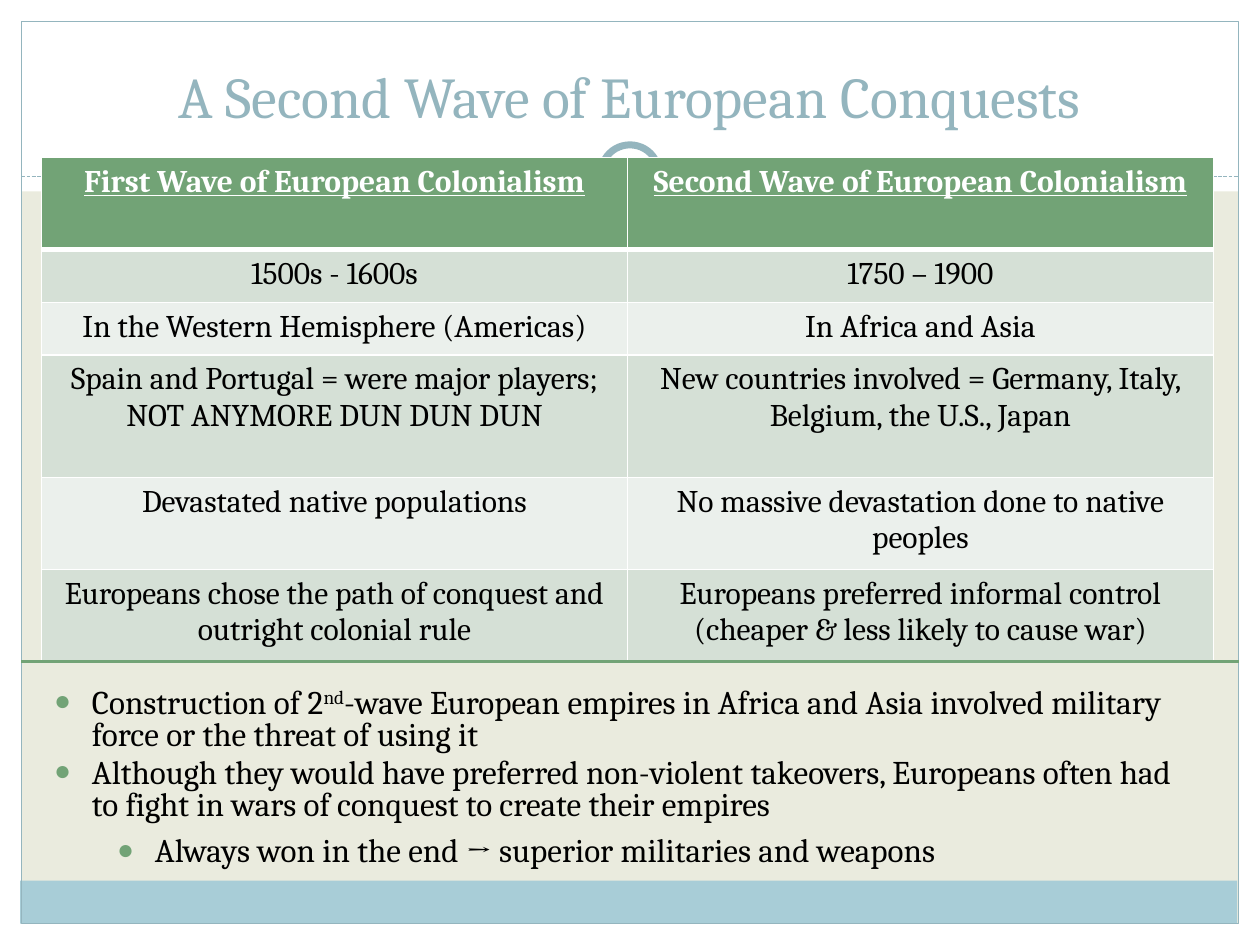
from dataclasses import dataclass
from typing import Optional

from lxml.etree import SubElement
from pptx import Presentation
from pptx.dml.color import RGBColor
from pptx.enum.dml import MSO_LINE
from pptx.enum.shapes import MSO_CONNECTOR, MSO_SHAPE
from pptx.enum.text import MSO_ANCHOR, MSO_AUTO_SIZE, PP_ALIGN
from pptx.oxml.ns import qn
from pptx.util import Inches, Pt


@dataclass(frozen=True)
class Theme:
    font: str = "Cambria"
    background: str = "EAEBDE"
    white: str = "FFFFFF"
    black: str = "000000"
    blue: str = "94B5BE"
    light_blue: str = "A8CDD7"
    green: str = "72A376"
    bands: tuple = ("D5E0D6", "EBF0EC")
    title_size: float = 33
    table_size: float = 18
    body_size: float = 18.9


@dataclass(frozen=True)
class Panel:
    left: float
    top: float
    width: float
    height: float
    fill: Optional[str] = None
    line: Optional[str] = None
    line_width: float = 0.75
    preset: MSO_SHAPE = MSO_SHAPE.RECTANGLE


@dataclass(frozen=True)
class Bullet:
    texts: tuple  # every second text is superscript
    level: int = 0
    indent: float = 0.3
    line_spacing: float = 0.8


THEME = Theme()
EDGE = 0.17
RIGHT = 10 - EDGE

FRAME = [
    Panel(0, 7.33, 10, EDGE, THEME.white),
    Panel(0, 0, 10, 1.52, THEME.white),
    Panel(0, 0, EDGE, 7.5, THEME.white),
    Panel(RIGHT, 0, EDGE, 7.5, THEME.white),
    Panel(0.16, 6.99, 9.66, 0.34, THEME.light_blue),
    Panel(EDGE, EDGE, 9.66, 7.16, line=THEME.blue),
]
RING = [
    Panel(4.67, 1.05, 0.67, 0.67, THEME.white, preset=MSO_SHAPE.OVAL),
    Panel(4.77, 1.15, 0.46, 0.46, THEME.white, THEME.blue, 4, MSO_SHAPE.OVAL),
]
ROW_HEIGHTS = [0.73, 0.42, 0.42, 0.97, 0.73, 0.73]
ROWS = [
    ("First Wave of European Colonialism", "Second Wave of European Colonialism"),
    ("1500s - 1600s", "1750 – 1900"),
    ("In the Western Hemisphere (Americas)", "In Africa and Asia"),
    ("Spain and Portugal = were major players; NOT ANYMORE DUN DUN DUN",
     "New countries involved = Germany, Italy, Belgium, the U.S., Japan"),
    ("Devastated native populations", "No massive devastation done to native peoples"),
    ("Europeans chose the path of conquest and outright colonial rule",
     "Europeans preferred informal control (cheaper & less likely to cause war)"),
]
BULLETS = [
    Bullet(("Construction of 2", "nd", "-wave European empires in Africa and Asia "
            "involved military force or the threat of using it")),
    Bullet(("Although they would have preferred non-violent takeovers, Europeans often "
            "had to fight in wars of conquest to create their empires",)),
    Bullet(("Always won in the end → superior militaries and weapons",), 1, 0.8, 1.0),
]


def color(value: str) -> RGBColor:
    return RGBColor.from_string(value)


def format_run(run, size: float, value: str, bold: bool = False) -> None:
    run.font.name = THEME.font
    run.font.size = Pt(size)
    run.font.color.rgb = color(value)
    run.font.bold = bold
    run.font.underline = bold


def place(shape, left: float, top: float, width: float, height: float) -> None:
    shape.left, shape.top = Inches(left), Inches(top)
    shape.width, shape.height = Inches(width), Inches(height)


def add_panel(slide, panel: Panel) -> None:
    shape = slide.shapes.add_shape(
        panel.preset, Inches(panel.left), Inches(panel.top),
        Inches(panel.width), Inches(panel.height))
    shape.shadow.inherit = False
    if panel.fill:
        shape.fill.solid()
        shape.fill.fore_color.rgb = color(panel.fill)
    else:
        shape.fill.background()
    if panel.line:
        shape.line.color.rgb = color(panel.line)
        shape.line.width = Pt(panel.line_width)
    else:
        shape.line.fill.background()


def add_rule(slide, top: float, value: str, width: float, dash=None) -> None:
    rule = slide.shapes.add_connector(
        MSO_CONNECTOR.STRAIGHT, Inches(EDGE), Inches(top), Inches(RIGHT), Inches(top))
    rule.line.color.rgb = color(value)
    rule.line.width = Pt(width)
    if dash:
        rule.line.dash_style = dash
    SubElement(rule._element.spPr, qn("a:effectLst"))


def set_borders(cell, bottom_width: float, top_width: float) -> None:
    properties = cell._tc.get_or_add_tcPr()
    widths = {"a:lnL": 1, "a:lnR": 1, "a:lnT": top_width, "a:lnB": bottom_width}
    for tag, width in widths.items():
        border = SubElement(properties, qn(tag), w=str(Pt(width)))
        fill = SubElement(border, qn("a:solidFill"))
        SubElement(fill, qn("a:srgbClr"), val=THEME.white)


def add_comparison(slide) -> None:
    table = slide.shapes.add_table(
        len(ROWS), 2, Inches(0.33), Inches(1.25), Inches(9.3),
        Inches(sum(ROW_HEIGHTS))).table
    for row_index, (texts, height) in enumerate(zip(ROWS, ROW_HEIGHTS)):
        table.rows[row_index].height = Inches(height)
        header = row_index == 0
        for column_index, text in enumerate(texts):
            cell = table.cell(row_index, column_index)
            set_borders(cell, 3 if header else 1, 3 if row_index == 1 else 1)
            cell.fill.solid()
            cell.fill.fore_color.rgb = color(
                THEME.green if header else THEME.bands[(row_index - 1) % 2])
            cell.text_frame.text = text
            paragraph = cell.text_frame.paragraphs[0]
            paragraph.alignment = PP_ALIGN.CENTER
            format_run(paragraph.runs[0], THEME.table_size,
                       THEME.white if header else THEME.black, header)


def write_bullet(paragraph, bullet: Bullet) -> None:
    paragraph.level = bullet.level
    paragraph.line_spacing = bullet.line_spacing
    paragraph.space_before = Pt(3.8)
    for index, text in enumerate(bullet.texts):
        run = paragraph.add_run()
        run.text = text
        format_run(run, THEME.body_size, THEME.black)
        if index % 2:
            run.font._element.set("baseline", "30000")
    properties = paragraph._p.get_or_add_pPr()
    properties.set("marL", str(Inches(bullet.indent)))
    properties.set("indent", str(Inches(-0.3)))
    bullet_color = SubElement(properties, qn("a:buClr"))
    SubElement(bullet_color, qn("a:srgbClr"), val=THEME.green)
    SubElement(properties, qn("a:buSzPct"), val="85000")
    SubElement(properties, qn("a:buChar"), char="●")


def main() -> None:
    presentation = Presentation()
    presentation.slide_width, presentation.slide_height = Inches(10), Inches(7.5)
    slide = presentation.slides.add_slide(presentation.slide_layouts[1])
    slide.background.fill.solid()
    slide.background.fill.fore_color.rgb = color(THEME.background)
    title, body = slide.placeholders

    # Frame, dashed rule and ring
    for panel in FRAME:
        add_panel(slide, panel)
    add_rule(slide, 1.4, THEME.blue, 0.75, MSO_LINE.SQUARE_DOT)
    for panel in RING:
        add_panel(slide, panel)

    # Title, raised above the frame
    slide.shapes._spTree.append(title._element)
    place(title, 0.33, 0.25, 9.33, 0.83)
    title.text_frame.text = "A Second Wave of European Conquests"
    title.text_frame.vertical_anchor = MSO_ANCHOR.BOTTOM
    title.text_frame.auto_size = MSO_AUTO_SIZE.NONE
    title.text_frame.paragraphs[0].alignment = PP_ALIGN.CENTER
    format_run(title.text_frame.paragraphs[0].runs[0], THEME.title_size, THEME.blue)

    add_comparison(slide)

    # Bullet list below the table
    slide.shapes._spTree.append(body._element)
    place(body, 0.33, 5.42, 9.3, 1.5)
    frame = body.text_frame
    frame.auto_size = MSO_AUTO_SIZE.NONE
    for index, bullet in enumerate(BULLETS):
        write_bullet(frame.add_paragraph() if index else frame.paragraphs[0], bullet)
    add_rule(slide, 5.25, THEME.green, 2.25)

    presentation.save("out.pptx")


if __name__ == "__main__":
    main()
